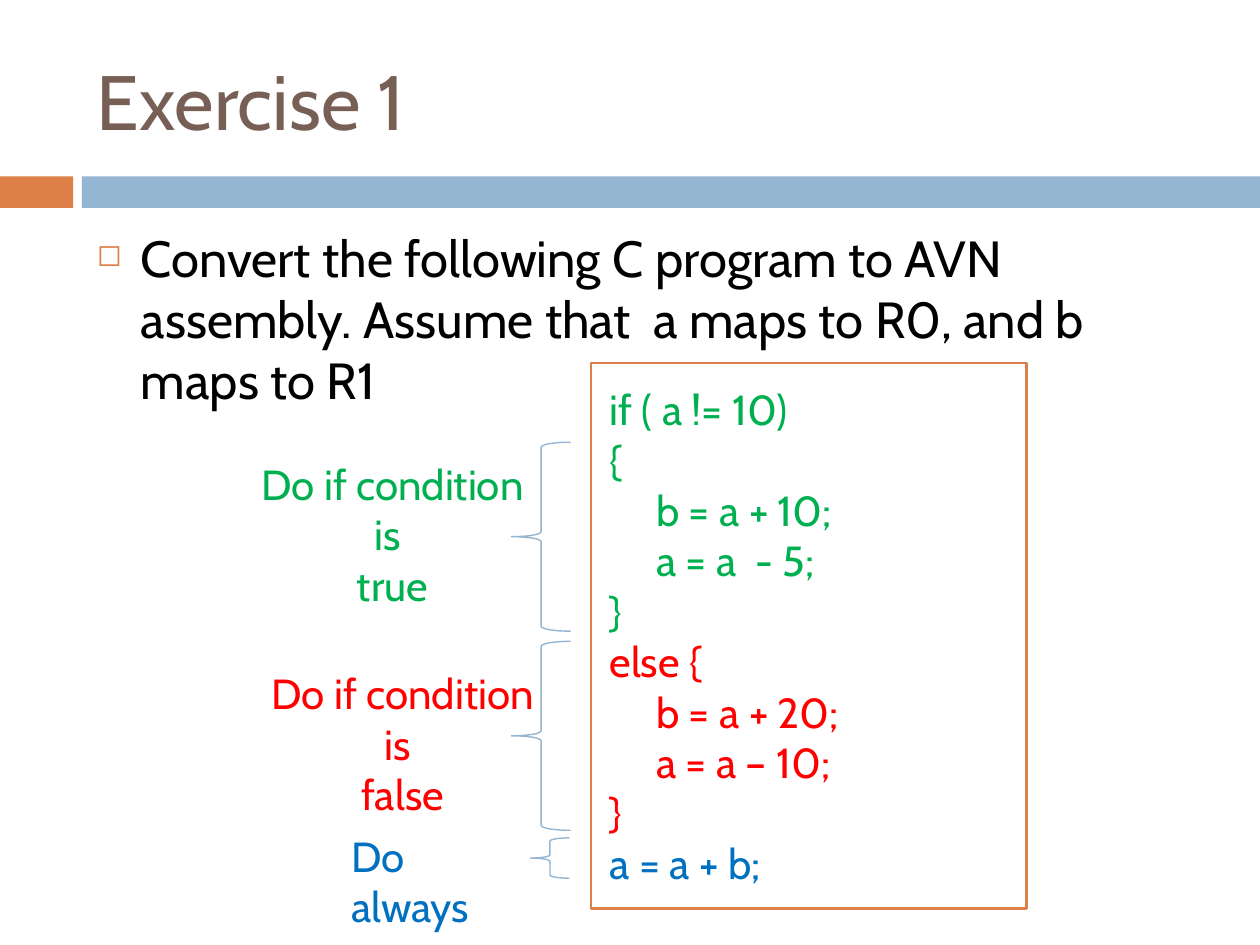
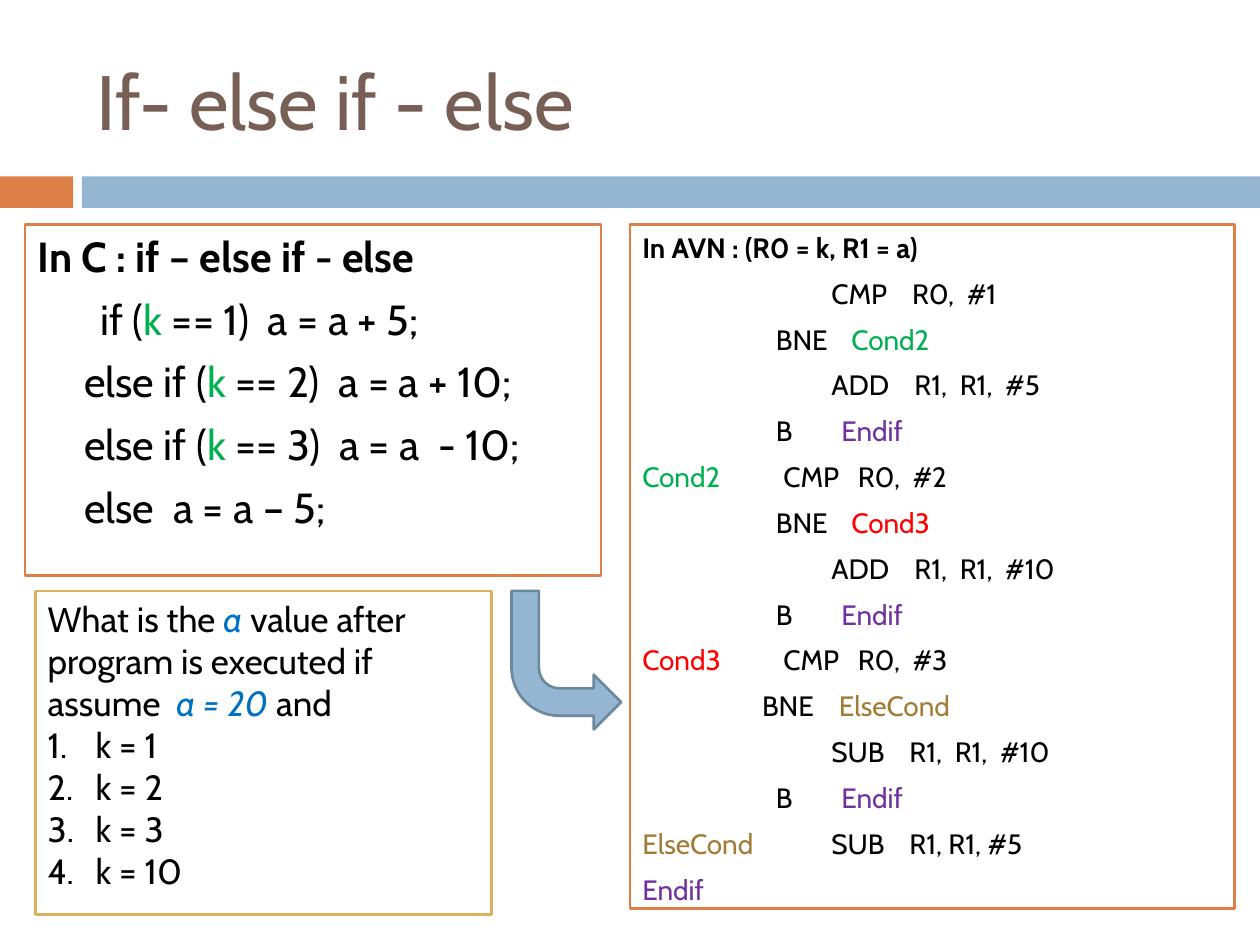
import dataclasses

import lxml.etree
import pptx
import pptx.dml.color
import pptx.enum.shapes
import pptx.enum.text
import pptx.oxml.ns
import pptx.util

Inches = pptx.util.Inches
Pt = pptx.util.Pt
Shape = pptx.enum.shapes.MSO_SHAPE
Align = pptx.enum.text.PP_ALIGN
Anchor = pptx.enum.text.MSO_ANCHOR


@dataclasses.dataclass(frozen=True)
class Theme:
    font: str = "Cabin"
    title: str = "775F55"
    orange: str = "DD8047"
    blue: str = "94B6D2"
    arrow_edge: str = "6D879B"
    gold: str = "D8B25C"
    white: str = "FFFFFF"
    black: str = "000000"
    green: str = "00B050"
    red: str = "FF0000"
    accent: str = "0070C0"
    purple: str = "7030A0"
    brown: str = "A17C36"
    title_size: int = 44
    body_size: int = 29
    code_size: int = 24
    question_size: int = 20
    assembly_size: int = 16
    border: float = 1.5
    brace_line: float = 0.79
    spacing: int = 7


THEME = Theme()

TITLES = ("Exercise 1", "If- else if - else")
TASK = ("Convert the following C program to AVN "
        "assembly. Assume that  a maps to R0, and b maps to R1")

EXERCISE_CODE = [
    ("if ( a != 10)", 0, THEME.green),
    ("{", 0, THEME.green),
    ("b = a + 10;", 1, THEME.green),
    ("a = a  - 5;", 1, THEME.green),
    ("}", 0, THEME.green),
    ("else {", 0, THEME.red),
    ("b = a + 20;", 1, THEME.red),
    ("a = a – 10;", 1, THEME.red),
    ("}", 0, THEME.red),
    ("a = a + b;", 0, THEME.accent),
]

BRANCHES = [
    dict(lines=["Do if condition is ", "true"], color=THEME.green, align=Align.CENTER,
         label=(1.86, 3.59, 2.51, 0.91), brace=(4.06, 3.51, 0.47, 1.5)),
    dict(lines=["Do if condition is ", "false"], color=THEME.red, align=Align.CENTER,
         label=(1.94, 5.25, 2.51, 0.91), brace=(4.06, 5.09, 0.47, 1.5)),
    dict(lines=["Do always"], color=THEME.accent, align=Align.LEFT,
         label=(2.69, 6.54, 1.6, 0.5), brace=(4.21, 6.65, 0.31, 0.32)),
]

C_HEADING = "In C : if – else if - else"
C_CODE = [
    (0.5, ["if (", ("k", THEME.green), " == 1)  a = a + 5;"]),
    (0.37, ["else if (", ("k", THEME.green), " == 2)  a = a + 10;"]),
    (0.37, ["else if (", ("k", THEME.green), " == 3)  a = a  - 10;"]),
    (0.37, ["else  a = a – 5;"]),
]

LABEL_COLORS = {"Cond2": THEME.green, "Cond3": THEME.red,
                "ElseCond": THEME.brown, "Endif": THEME.purple}
ASSEMBLY_HEADING = "In AVN : (R0 = k, R1 = a)"
ASSEMBLY_CODE = [
    ("", "CMP", "R0,  #1", (1.5, 2.14)),
    ("", "BNE", "Cond2", (1.06, 1.66)),
    ("", "ADD", "R1,  R1,  #5", (1.5, 2.16)),
    ("", "B", "Endif", (1.06, 1.58)),
    ("Cond2", "CMP", "R0,  #2", (1.12, 1.71)),
    ("", "BNE", "Cond3", (1.06, 1.66)),
    ("", "ADD", "R1,  R1,  #10", (1.5, 2.16)),
    ("", "B", "Endif", (1.06, 1.58)),
    ("Cond3", "CMP", "R0,  #3", (1.12, 1.71)),
    ("", "BNE", "ElseCond", (0.95, 1.56)),
    ("", "SUB", "R1,  R1,  #10", (1.5, 2.12)),
    ("", "B", "Endif", (1.06, 1.58)),
    ("ElseCond", "SUB", "R1, R1, #5", (1.5, 2.12)),
    ("Endif", "", "", ()),
]

QUESTION = ["What is the ", ("a", THEME.accent, True),
            " value after program is executed if assume  ",
            ("a = 20 ", THEME.accent, True), "and"]
CASES = ["k = 1", "k = 2", "k = 3", "k = 10"]


def rgb(color):
    return pptx.dml.color.RGBColor.from_string(color)


def add_xml(parent, tag, **attributes):
    return lxml.etree.SubElement(parent, pptx.oxml.ns.qn(tag), attributes)


def add_box(page, area, kind=None, fill=None, line=None, weight=THEME.border,
            anchor=Anchor.TOP):
    lengths = [Inches(value) for value in area]
    if kind is None:
        box = page.shapes.add_textbox(*lengths)
    else:
        box = page.shapes.add_shape(kind, *lengths)
        box.shadow.inherit = False
        if fill:
            box.fill.solid()
            box.fill.fore_color.rgb = rgb(fill)
        else:
            box.fill.background()
        if line:
            box.line.color.rgb = rgb(line)
            box.line.width = Pt(weight)
        else:
            box.line.fill.background()
    box.text_frame.word_wrap = True
    box.text_frame.vertical_anchor = anchor
    return box


def add_text(box, text, size=THEME.code_size, color=THEME.black, bold=False,
             align=Align.LEFT, before=0, left=0, hanging=0, bullet=None,
             numbered=False, tabs=()):
    frame = box.text_frame
    para = frame.paragraphs[0]
    if para.runs:
        para = frame.add_paragraph()
    para.alignment = align
    para.space_before = Pt(before)
    properties = para._p.get_or_add_pPr()
    if left:
        properties.set("marL", str(Inches(left)))
    if hanging:
        properties.set("indent", str(-Inches(hanging)))
    if bullet:
        add_xml(add_xml(properties, "a:buClr"), "a:srgbClr", val=THEME.orange)
        add_xml(properties, "a:buSzPct", val="60000")
        add_xml(properties, "a:buChar", char=bullet)
    if numbered:
        add_xml(properties, "a:buAutoNum", type="arabicPeriod")
    if tabs:
        stops = add_xml(properties, "a:tabLst")
        for stop in tabs:
            add_xml(stops, "a:tab", pos=str(Inches(stop)), algn="l")
    for part in [text] if isinstance(text, str) else text:
        words, tint, italic = ((part, color, False) if isinstance(part, str)
                               else (*part, False)[:3])
        span = para.add_run()
        span.text = words
        span.font.name = THEME.font
        span.font.size = Pt(size)
        span.font.bold = bold
        span.font.italic = italic
        span.font.color.rgb = rgb(tint)


def add_page(deck, title):
    page = deck.slides.add_slide(deck.slide_layouts[6])
    add_box(page, (0, 1.4, 0.58, 0.25), Shape.RECTANGLE, fill=THEME.orange)
    add_box(page, (0.65, 1.4, 9.35, 0.25), Shape.RECTANGLE, fill=THEME.blue)
    heading = add_box(page, (0.67, 0.25, 8.92, 1.08), anchor=Anchor.MIDDLE)
    add_text(heading, title, size=THEME.title_size, color=THEME.title)
    return page


def add_panel(page, area, line=THEME.orange, anchor=Anchor.TOP):
    return add_box(page, area, Shape.RECTANGLE, fill=THEME.white, line=line, anchor=anchor)


def build_exercise(deck):
    page = add_page(deck, TITLES[0])
    task = add_box(page, (0.67, 1.75, 8.92, 4.92))
    add_text(task, TASK, size=THEME.body_size, before=THEME.spacing,
             left=0.35, hanging=0.35, bullet="◻")
    code = add_panel(page, (4.69, 2.88, 3.46, 4.33), anchor=Anchor.MIDDLE)
    for text, level, color in EXERCISE_CODE:
        add_text(code, text, color=color, left=0.05 + 0.37 * level)
    for branch in BRANCHES:
        add_box(page, branch["brace"], Shape.LEFT_BRACE, line=THEME.blue,
                weight=THEME.brace_line)
        label = add_box(page, branch["label"])
        for text in branch["lines"]:
            add_text(label, text, color=branch["color"], align=branch["align"])


def build_else_if(deck):
    page = add_page(deck, TITLES[1])
    assembly = add_panel(page, (5, 1.78, 4.8, 5.43))
    add_text(assembly, ASSEMBLY_HEADING, size=THEME.assembly_size, bold=True,
             before=THEME.spacing)
    for label, command, operand, tabs in ASSEMBLY_CODE:
        parts = [(label, LABEL_COLORS[label])] if label else []
        if command:
            parts += ["\t" + command + "\t",
                      (operand, LABEL_COLORS.get(operand, THEME.black))]
        add_text(assembly, parts, size=THEME.assembly_size, before=THEME.spacing,
                 tabs=tabs)

    c_code = add_panel(page, (0.2, 1.78, 4.57, 2.79))
    add_text(c_code, C_HEADING, bold=True, before=THEME.spacing)
    for left, parts in C_CODE:
        add_text(c_code, parts, before=THEME.spacing, left=left)

    arrow = add_box(page, (4.06, 4.69, 0.87, 1.1), Shape.BENT_ARROW,
                    fill=THEME.blue, line=THEME.arrow_edge)
    arrow._element.spPr.xfrm.set("flipV", "1")

    question = add_panel(page, (0.28, 4.69, 3.62, 2.57), line=THEME.gold)
    add_text(question, QUESTION, size=THEME.question_size)
    for case in CASES:
        add_text(question, case, size=THEME.question_size, left=0.38, hanging=0.38,
                 numbered=True)


def main():
    deck = pptx.Presentation()
    deck.slide_width = Inches(10)
    deck.slide_height = Inches(7.5)
    build_exercise(deck)
    build_else_if(deck)
    deck.save("out.pptx")


if __name__ == "__main__":
    main()
